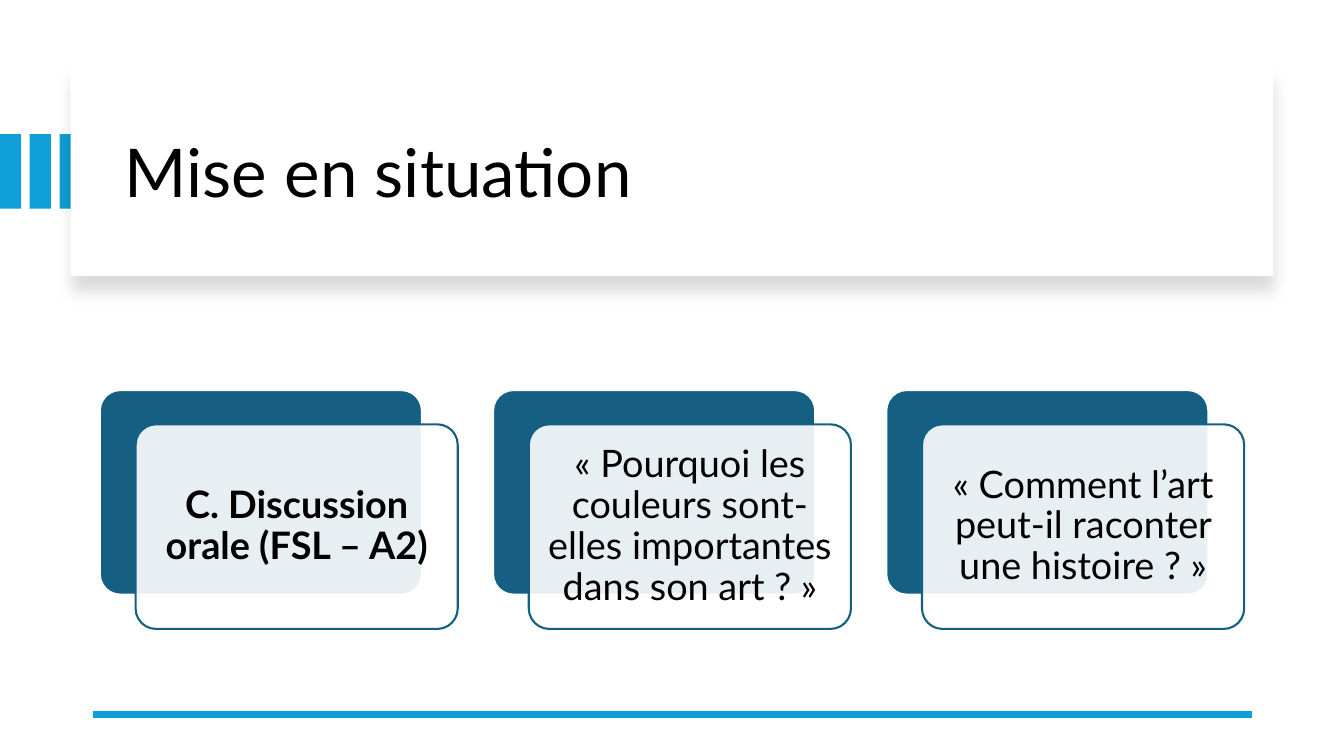
import pptx
import pptx.util
import pptx.dml.color
import pptx.enum.shapes
import pptx.enum.text
import pptx.oxml
import pptx.oxml.ns

Inches, Pt = pptx.util.Inches, pptx.util.Pt
RGBColor = pptx.dml.color.RGBColor
SHAPE = pptx.enum.shapes.MSO_SHAPE
ALIGN = pptx.enum.text.PP_ALIGN

SKY = RGBColor(0x0F, 0x9E, 0xD5)
TEAL = RGBColor(0x15, 0x60, 0x82)
WHITE = RGBColor(0xFF, 0xFF, 0xFF)
BLACK = RGBColor(0, 0, 0)
NS = pptx.oxml.ns.nsdecls("a")

QUESTIONS = [
    ("C. Discussion orale (FSL – A2)", True),
    ("« Pourquoi les couleurs sont-elles importantes dans son art ? »", False),
    ("« Comment l’art peut-il raconter une histoire ? »", False),
]


def add_box(s, kind, x, y, w, h, fill, line=None):
    sp = s.shapes.add_shape(kind, Inches(x), Inches(y), Inches(w), Inches(h))
    sp.shadow.inherit = False
    sp.fill.solid()
    sp.fill.fore_color.rgb = fill
    if line is None:
        sp.line.fill.background()
    else:
        sp.line.color.rgb = line
        sp.line.width = Pt(1.5)
    return sp


def add_text(s, text, x, y, w, h, align, inset, **font):
    sp = s.shapes.add_textbox(Inches(x), Inches(y), Inches(w), Inches(h))
    tf = sp.text_frame
    tf.word_wrap = True
    tf.vertical_anchor = pptx.enum.text.MSO_ANCHOR.MIDDLE
    for side, value in inset.items():
        setattr(tf, f"margin_{side}", Inches(value))
    p = tf.paragraphs[0]
    p.alignment = align
    p.line_spacing = 0.9
    r = p.add_run()
    r.text = text
    r.font.color.rgb = BLACK
    for name, value in {"name": "Lato", **font}.items():
        setattr(r.font, name, value)


def add_header(s, x, y, w, h):
    # Three bars running in from the slide edge, under the panel
    for i in range(3):
        add_box(s, SHAPE.RECTANGLE, i * 0.295, y + 0.66, 0.21, 0.74, SKY)

    # White panel with a soft shadow below
    panel = add_box(s, SHAPE.RECTANGLE, x, y, w, h, WHITE)
    effects = panel._element.spPr.find(pptx.oxml.ns.qn("a:effectLst"))
    effects.append(pptx.oxml.parse_xml(
        f'<a:outerShdw {NS} blurRad="{Pt(11)}" dist="{Pt(10)}" dir="5400000" '
        'algn="t" rotWithShape="0"><a:srgbClr val="000000">'
        '<a:alpha val="15000"/></a:srgbClr></a:outerShdw>'))

    add_text(s, "Mise en situation", x + 0.44, y + 0.22, w - 0.8, h - 0.37,
             ALIGN.LEFT, {}, size=Pt(48))


def add_card(s, text, bold, x, y, w, h):
    # Dark back plate
    back = add_box(s, SHAPE.ROUNDED_RECTANGLE, x, y, w, h, TEAL, WHITE)
    # Translucent front plate, shifted down and right
    x, y = x + 0.355, y + 0.34
    front = add_box(s, SHAPE.ROUNDED_RECTANGLE, x, y, w, h, WHITE, TEAL)
    for plate in (back, front):
        plate.adjustments[0] = 0.1
    color = front._element.spPr.find(".//" + pptx.oxml.ns.qn("a:srgbClr"))
    color.append(pptx.oxml.parse_xml(f'<a:alpha {NS} val="90000"/>'))

    inset = dict.fromkeys(("left", "top", "right", "bottom"), 0.11)
    add_text(s, text, x + 0.06, y + 0.06, w - 0.12, h - 0.12,
             ALIGN.CENTER, inset, size=Pt(27), bold=bold)


def add_cards(s, x, y, w, h):
    pitch = 3.9
    card_w = w - 0.355 - pitch * (len(QUESTIONS) - 1)
    for i, (text, bold) in enumerate(QUESTIONS):
        add_card(s, text, bold, x + i * pitch, y, card_w, h - 0.34)


def add_footer_line(s, x, y, w):
    line = s.shapes.add_connector(
        pptx.enum.shapes.MSO_CONNECTOR.STRAIGHT,
        Inches(x + w), Inches(y), Inches(x), Inches(y))
    line.line.color.rgb = SKY
    line.line.width = Pt(4.5)
    line._element.spPr.append(pptx.oxml.parse_xml(f"<a:effectLst {NS}/>"))


def main():
    prs = pptx.Presentation()
    prs.slide_width, prs.slide_height = Inches(13.33), Inches(7.5)
    s = prs.slides.add_slide(prs.slide_layouts[6])
    add_header(s, 0.7, 0.67, 11.93, 2.07)
    add_footer_line(s, 0.92, 7.09, 11.5)
    add_cards(s, 0.99, 3.87, 11.35, 2.37)
    prs.save("out.pptx")


if __name__ == "__main__":
    main()
